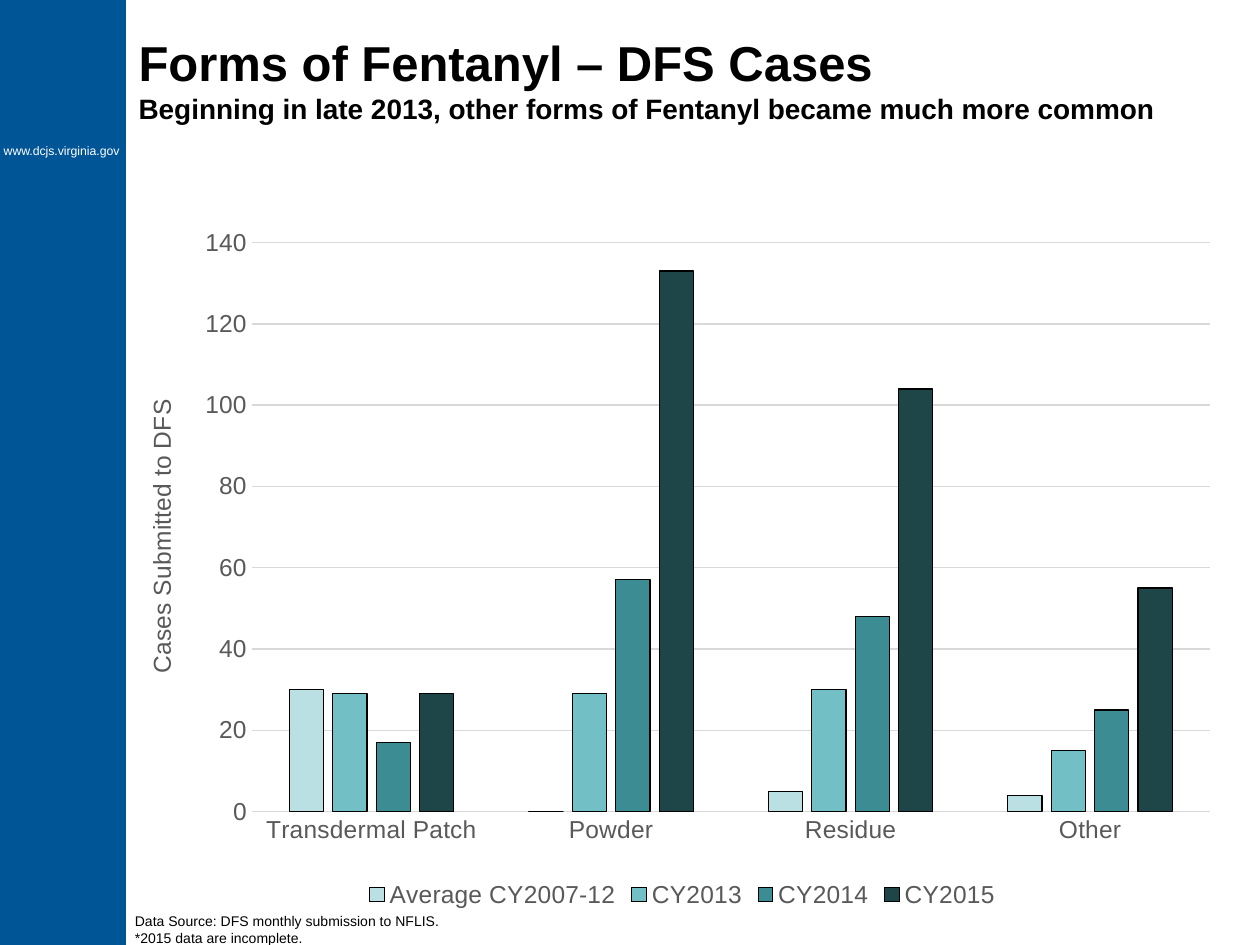
import pptx
import pptx.chart.data
import pptx.dml.color
import pptx.enum.chart
import pptx.enum.shapes
import pptx.enum.text
import pptx.oxml
import pptx.oxml.ns
import pptx.util

WIDE, HIGH = 10, 7.5
FACE = "Arial"
COLORS = {
    "band": "005596", "white": "FFFFFF", "black": "000000",
    "label": "595959", "grid": "D9D9D9",
}
FORMS = ["Transdermal Patch", "Powder", "Residue", "Other"]
YEARS = [
    ("Average CY2007-12", (30, 0, 5, 4), "BBE0E3"),
    ("CY2013", (29, 29, 30, 15), "72BFC5"),
    ("CY2014", (17, 57, 48, 25), "3C8C93"),
    ("CY2015", (29, 133, 104, 55), "1E4649"),
]
PLOT = {"x": 0.106, "y": 0.032, "w": 0.877, "h": 0.821}


def rgb(code):
    return pptx.dml.color.RGBColor.from_string(code)


def box(*sides):
    return [pptx.util.Inches(side) for side in sides]


def style(font, size, color, bold=False):
    font.name = FACE
    font.size = pptx.util.Pt(size)
    font.bold = bold
    font.color.rgb = rgb(color)


def stroke(line, color):
    line.color.rgb = rgb(color)
    line.width = pptx.util.Pt(0.75)


def add_run(para, text, size, color, bold=False):
    run = para.add_run()
    run.text = text
    style(run.font, size, color, bold)


def add_band(slide):
    band = slide.shapes.add_shape(
        pptx.enum.shapes.MSO_SHAPE.RECTANGLE, *box(0, 0, WIDE / 10, HIGH))
    band.shadow.inherit = False
    band.fill.solid()
    band.fill.fore_color.rgb = rgb(COLORS["band"])
    band.line.fill.background()


def add_text(slide, place, lines, size, color, wrap=True):
    frame = slide.shapes.add_textbox(*box(*place)).text_frame
    frame.margin_left = frame.margin_right = 0
    frame.margin_top = frame.margin_bottom = 0
    frame.word_wrap = wrap
    for i, text in enumerate(lines):
        para = frame.add_paragraph() if i else frame.paragraphs[0]
        add_run(para, text, size, color)


def set_title(slide, head, sub):
    title = slide.shapes.title
    title.left, title.top, title.width, title.height = box(1, 0, 8.75, 1.25)
    frame = title.text_frame
    frame.word_wrap = True
    frame.auto_size = pptx.enum.text.MSO_AUTO_SIZE.NONE
    frame.vertical_anchor = pptx.enum.text.MSO_ANCHOR.MIDDLE
    para = frame.paragraphs[0]
    para.alignment = pptx.enum.text.PP_ALIGN.LEFT
    para.line_spacing = 1.0
    add_run(para, head, 28, COLORS["black"], True)
    para.add_line_break()
    add_run(para, sub, 16, COLORS["black"], True)


def set_plot(chart):
    """Fix the inner plot area as shares of the chart's size."""
    area = chart._chartSpace.chart.plotArea
    for old in area.findall(pptx.oxml.ns.qn("c:layout")):
        area.remove(old)
    marks = '<c:layoutTarget val="inner"/>'
    marks += "".join(f'<c:{key}Mode val="edge"/>' for key in "xy")
    marks += "".join(f'<c:{key} val="{val}"/>' for key, val in PLOT.items())
    area.insert(0, pptx.oxml.parse_xml(
        f'<c:layout {pptx.oxml.ns.nsdecls("c")}>'
        f'<c:manualLayout>{marks}</c:manualLayout></c:layout>'))


def set_axes(chart):
    for axis in (chart.category_axis, chart.value_axis):
        axis.major_tick_mark = pptx.enum.chart.XL_TICK_MARK.NONE
        axis.minor_tick_mark = pptx.enum.chart.XL_TICK_MARK.NONE
        style(axis.tick_labels.font, 14, COLORS["label"])
    stroke(chart.category_axis.format.line, COLORS["grid"])
    value = chart.value_axis
    value.minimum_scale, value.maximum_scale, value.major_unit = 0, 140, 20
    value.tick_labels.number_format = "0"
    value.tick_labels.number_format_is_linked = False
    value.format.line.fill.background()
    value.has_major_gridlines = True
    stroke(value.major_gridlines.format.line, COLORS["grid"])
    para = value.axis_title.text_frame.paragraphs[0]
    add_run(para, "Cases Submitted to DFS", 14, COLORS["label"])


def add_cases(slide):
    data = pptx.chart.data.CategoryChartData(number_format="0")
    data.categories = FORMS
    for name, counts, _ in YEARS:
        data.add_series(name, counts)
    chart = slide.shapes.add_chart(
        pptx.enum.chart.XL_CHART_TYPE.COLUMN_CLUSTERED,
        *box(1.08, 1.75, 8.67, 5.5), data).chart
    chart.has_title = False
    style(chart.font, 14, COLORS["black"])
    plot = chart.plots[0]
    plot.gap_width, plot.overlap = 219, -27
    plot.vary_by_categories = False
    for series, (_, _, color) in zip(plot.series, YEARS):
        series.format.fill.solid()
        series.format.fill.fore_color.rgb = rgb(color)
        stroke(series.format.line, COLORS["black"])
    set_axes(chart)
    set_plot(chart)
    chart.has_legend = True
    chart.legend.position = pptx.enum.chart.XL_LEGEND_POSITION.BOTTOM
    chart.legend.include_in_layout = False
    style(chart.legend.font, 14, COLORS["label"])


def main():
    deck = pptx.Presentation()
    deck.slide_width, deck.slide_height = box(WIDE, HIGH)
    slide = deck.slides.add_slide(deck.slide_layouts[5])
    add_band(slide)
    add_text(slide, (0.03, 1.14, 0.93, 0.12), ["www.dcjs.virginia.gov"],
             7, COLORS["white"], wrap=False)
    set_title(slide, "Forms of Fentanyl – DFS Cases",
              "Beginning in late 2013, other forms of Fentanyl "
              "became much more common")
    add_cases(slide)
    add_text(slide, (1.07, 7.24, 8.68, 0.19),
             ["Data Source: DFS monthly submission to NFLIS.",
              "*2015 data are incomplete."], 8, COLORS["black"])
    deck.save("out.pptx")


if __name__ == "__main__":
    main()
